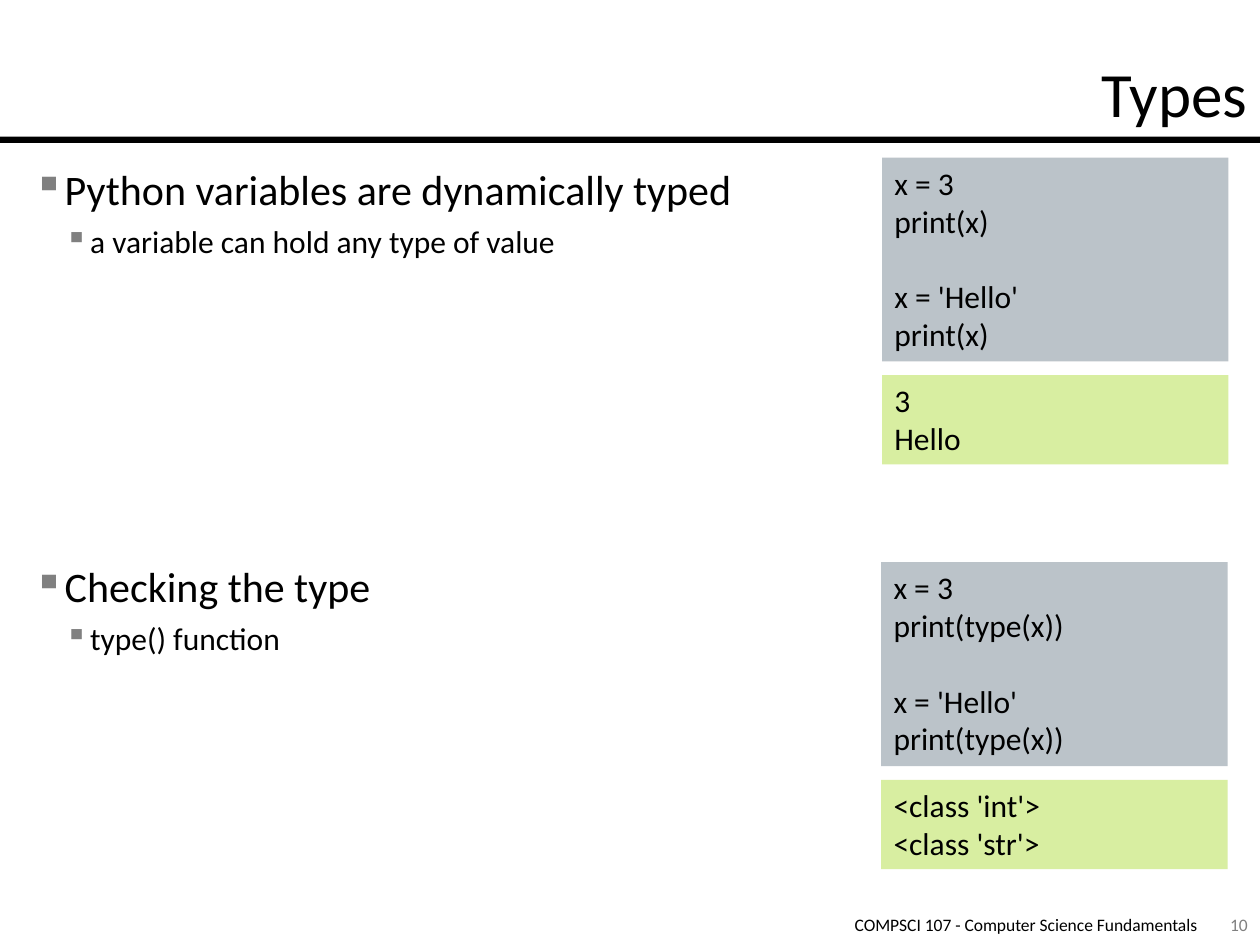
"""Build the "Types" slide: bullets beside Python code and its output."""
from lxml import etree
from pptx import Presentation
from pptx.dml.color import RGBColor
from pptx.enum.shapes import MSO_SHAPE
from pptx.enum.text import MSO_ANCHOR as ANCHOR, MSO_AUTO_SIZE as AUTO, PP_ALIGN as ALIGN
from pptx.oxml.ns import qn
from pptx.util import Pt


def rgb(value):
    return RGBColor.from_string(value)


def add_run(p, text, size, color="000000"):
    r = p.add_run()
    r.text = text
    r.font.name = "Calibri"
    r.font.size = Pt(size)
    r.font.color.rgb = rgb(color)


prs = Presentation()
prs.slide_width, prs.slide_height = Pt(720), Pt(540)
s = prs.slides.add_slide(prs.slide_layouts[5])

title = s.shapes.title
title.left, title.top, title.width, title.height = Pt(0), Pt(0), Pt(720), Pt(78)
tf = title.text_frame
tf.auto_size = AUTO.NONE
tf.vertical_anchor = ANCHOR.BOTTOM
tf.paragraphs[0].alignment = ALIGN.RIGHT
add_run(tf.paragraphs[0], "Types", 36)

rule = s.shapes.add_shape(MSO_SHAPE.RECTANGLE, Pt(0), Pt(78), Pt(720), Pt(3.6))
rule.shadow.inherit = False
rule.fill.solid()
rule.fill.fore_color.rgb = rgb("000000")
rule.line.fill.background()

topics = [
    (90, "Python variables are dynamically typed", "a variable can hold any type of value"),
    (317, "Checking the type", "type() function"),
]
for top, heading, detail in topics:
    tf = s.shapes.add_textbox(Pt(12), Pt(top), Pt(480), Pt(64)).text_frame
    tf.word_wrap = True
    levels = [(heading, 24, 14.4, 0), (detail, 18, 32.4, 4.4)]
    for level, (text, size, margin, before) in enumerate(levels):
        p = tf.add_paragraph() if level else tf.paragraphs[0]
        p.level = level
        p.space_before = Pt(before)
        pPr = p._p.get_or_add_pPr()
        pPr.set("marL", str(Pt(margin)))
        pPr.set("indent", str(-Pt(14.4)))
        color = etree.SubElement(pPr, qn("a:buClr"))
        etree.SubElement(color, qn("a:srgbClr"), val="808080")
        etree.SubElement(pPr, qn("a:buChar"), char="▪")
        add_run(p, text, size)

GRAY, GREEN = "BBC3C9", "D8EEA1"
panels = [
    (504, 90, 116.6, GRAY, [["x = 3", "print(x)"], ["x = 'Hello'", "print(x)"]]),
    (504, 214.4, 51, GREEN, [["3", "Hello"]]),
    (503.5, 321.2, 116.6, GRAY, [["x = 3", "print(type(x))"], ["x = 'Hello'", "print(type(x))"]]),
    (503.5, 445.6, 51, GREEN, [["<class 'int'>", "<class 'str'>"]]),
]
for left, top, height, fill, blocks in panels:
    sp = s.shapes.add_shape(MSO_SHAPE.RECTANGLE, Pt(left), Pt(top), Pt(198), Pt(height))
    sp.shadow.inherit = False
    sp.fill.solid()
    sp.fill.fore_color.rgb = rgb(fill)
    sp.line.fill.background()
    tf = sp.text_frame
    tf.word_wrap = True
    tf.vertical_anchor = ANCHOR.TOP
    p = tf.paragraphs[0]
    for b, block in enumerate(blocks):
        for i, text in enumerate(block):
            if b or i:
                p = tf.add_paragraph()
            if b and not i:
                p.space_before = Pt(21.6)
            p.alignment = ALIGN.LEFT
            add_run(p, text, 18)

footers = [
    (348, 336, 0, ALIGN.RIGHT, "COMPSCI 107 - Computer Science Fundamentals", "000000"),
    (690, 36, 7.2, ALIGN.CENTER, "10", "808080"),
]
for left, width, inset, align, text, color in footers:
    tf = s.shapes.add_textbox(Pt(left), Pt(522), Pt(width), Pt(12)).text_frame
    tf.word_wrap = True
    tf.vertical_anchor = ANCHOR.MIDDLE
    tf.margin_left = tf.margin_right = Pt(inset)
    tf.margin_top = tf.margin_bottom = Pt(0)
    tf.paragraphs[0].alignment = align
    add_run(tf.paragraphs[0], text, 10, color)

prs.save("out.pptx")
